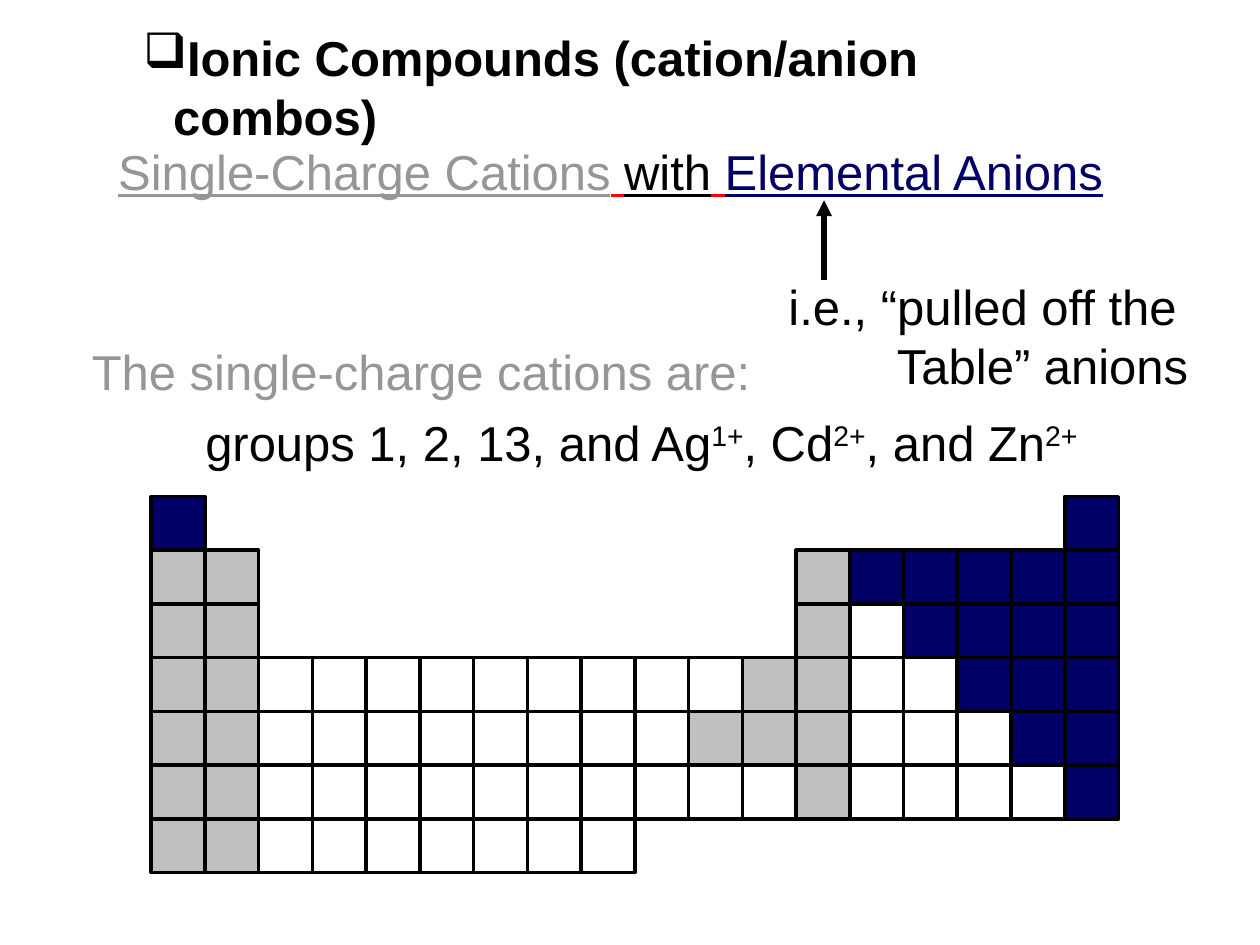
from dataclasses import dataclass

from lxml.etree import SubElement
from pptx import Presentation
from pptx.dml.color import RGBColor
from pptx.enum.shapes import MSO_CONNECTOR as Connector
from pptx.enum.shapes import MSO_SHAPE as Shape
from pptx.enum.text import MSO_ANCHOR as Anchor
from pptx.enum.text import MSO_AUTO_SIZE as AutoSize
from pptx.oxml.ns import qn
from pptx.util import Pt


@dataclass(frozen=True)
class Theme:
    font: str = "Arial"
    text_size: float = 28
    ink: str = "000000"
    cation_text: str = "969696"
    cation_cell: str = "C0C0C0"
    anion: str = "000066"
    accent: str = "FF0000"
    cell_line: float = 2
    arrow_line: float = 3


THEME = Theme()
CELL = 30.71
TABLE_LEFT, TABLE_TOP = 86.4, 283.7
CELL_FILLS = {"c": THEME.cation_cell, "a": THEME.anion, ".": None}
PERIODS = [
    "a" + "_" * 16 + "a",
    "cc" + "_" * 10 + "caaaaa",
    "cc" + "_" * 10 + "c.aaaa",
    "cc" + "." * 9 + "cc..aaa",
    "cc" + "." * 8 + "ccc...aa",
    "cc" + "." * 10 + "c....a",
    "cc" + "." * 7,
]


def apply_format(target, values):
    for name, value in values.items():
        setattr(target, name, value)


def add_span(para, text, color=THEME.ink, raised=False, **extra):
    span = para.add_run()
    span.text = text
    apply_format(span.font, {"name": THEME.font, "size": Pt(THEME.text_size), **extra})
    span.font.color.rgb = RGBColor.from_string(color)
    if raised:
        span.font._element.set("baseline", "30000")


def add_text(page, left, top, width, height, wrap=False):
    box = page.shapes.add_textbox(Pt(left), Pt(top), Pt(width), Pt(height))
    apply_format(box.text_frame, {
        "word_wrap": wrap,
        "auto_size": AutoSize.SHAPE_TO_FIT_TEXT,
        "vertical_anchor": Anchor.MIDDLE,
    })
    return box.text_frame


def set_indent(para, margin, first_line=0):
    properties = para._p.get_or_add_pPr()
    properties.set("marL", str(Pt(margin)))
    properties.set("indent", str(Pt(first_line)))
    return properties


def add_title(page):
    para = add_text(page, 74.9, 28.8, 558, 41, wrap=True).paragraphs[0]
    properties = set_indent(para, 17, -17)
    SubElement(properties, qn("a:buChar")).set("char", "❑")
    add_span(para, "Ionic Compounds (cation/anion combos)", bold=True)


def add_subtitle(page):
    para = add_text(page, 60.5, 77, 580.3, 41).paragraphs[0]
    for text, color in [
        ("Single-Charge Cations", THEME.cation_text),
        (" ", THEME.accent),
        ("with", THEME.ink),
        (" ", THEME.accent),
        ("Elemental Anions", THEME.anion),
    ]:
        add_span(para, text, color, underline=True)


def add_cation_list(page):
    intro = add_text(page, 45.4, 191.5, 399.6, 41).paragraphs[0]
    add_span(intro, "The single-charge cations are:", THEME.cation_text)
    ions = add_text(page, 110.2, 231.8, 533.5, 41).paragraphs[0]
    for text, charge in [
        ("groups 1, 2, 13, and Ag", "1+"),
        (", Cd", "2+"),
        (", and Zn", "2+"),
    ]:
        add_span(ions, text)
        add_span(ions, charge, raised=True)


def add_anion_note(page):
    frame = add_text(page, 443.5, 154.8, 254.2, 74.2)
    add_span(frame.paragraphs[0], "i.e., “pulled off the")
    second = frame.add_paragraph()
    set_indent(second, 62)
    add_span(second, "Table” anions")


def add_arrow(page, x, start, end):
    arrow = page.shapes.add_connector(Connector.STRAIGHT, Pt(x), Pt(start), Pt(x), Pt(end))
    arrow.line.width = Pt(THEME.arrow_line)
    arrow.line.color.rgb = RGBColor.from_string(THEME.ink)
    SubElement(arrow.line._get_or_add_ln(), qn("a:tailEnd")).set("type", "triangle")
    SubElement(arrow._element.spPr, qn("a:effectLst"))


def add_cell(page, column, period, color):
    cell = page.shapes.add_shape(
        Shape.RECTANGLE,
        Pt(TABLE_LEFT + column * CELL), Pt(TABLE_TOP + period * CELL),
        Pt(CELL), Pt(CELL),
    )
    cell.shadow.inherit = False
    cell.line.width = Pt(THEME.cell_line)
    cell.line.color.rgb = RGBColor.from_string(THEME.ink)
    if color:
        cell.fill.solid()
        cell.fill.fore_color.rgb = RGBColor.from_string(color)
    else:
        cell.fill.background()


def add_periodic_table(page):
    for period, kinds in enumerate(PERIODS):
        for column, kind in enumerate(kinds):
            if kind in CELL_FILLS:
                add_cell(page, column, period, CELL_FILLS[kind])


def main():
    deck = Presentation()
    apply_format(deck, {"slide_width": Pt(720), "slide_height": Pt(540)})
    page = deck.slides.add_slide(deck.slide_layouts[6])
    add_title(page)
    add_subtitle(page)
    add_periodic_table(page)
    add_cation_list(page)
    add_anion_note(page)
    add_arrow(page, 470.9, 159.8, 114.5)
    deck.save("out.pptx")


if __name__ == "__main__":
    main()
